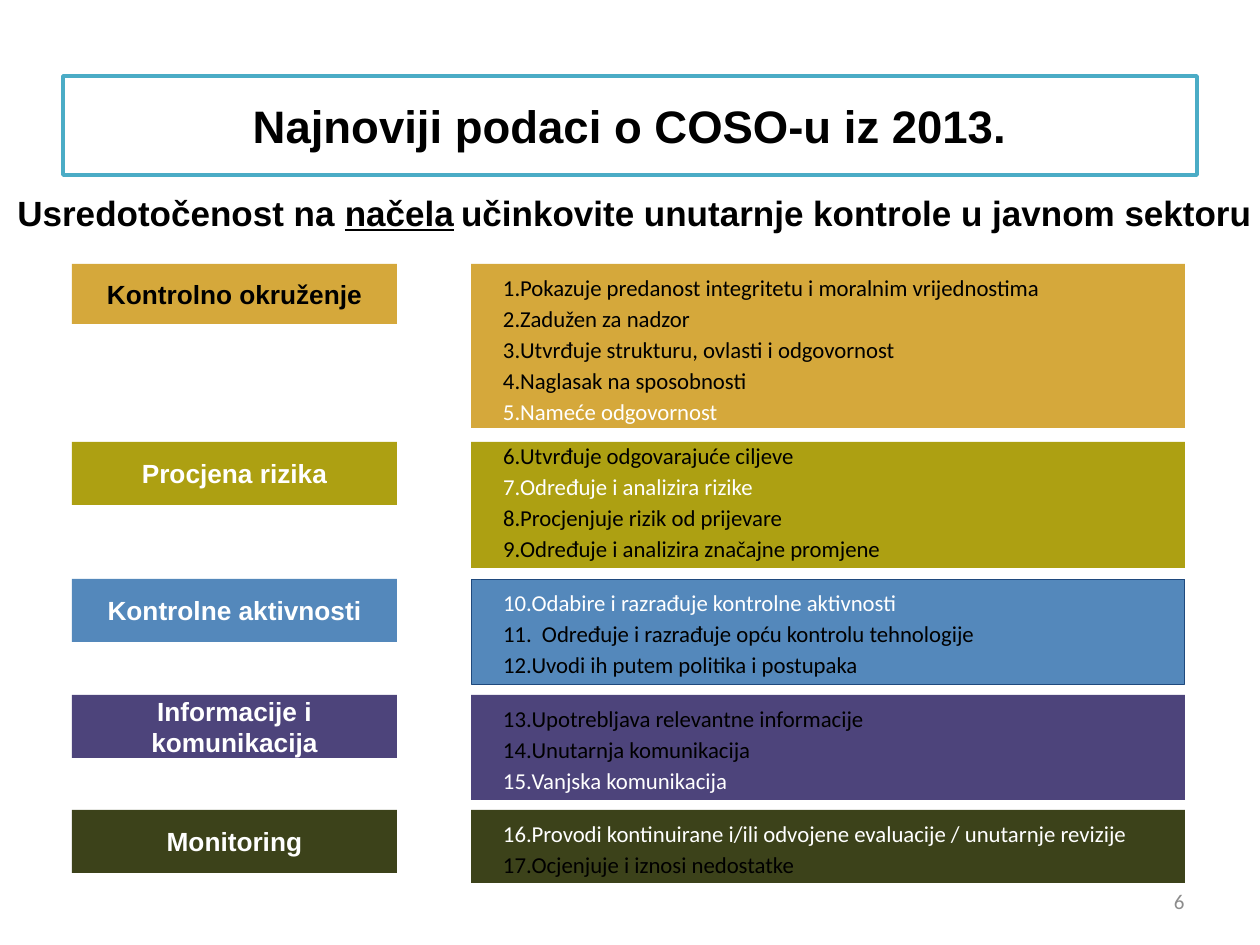
from lxml import etree
from pptx import Presentation
from pptx import util as u
from pptx.dml.color import RGBColor
from pptx.enum import shapes, text
from pptx.oxml.ns import qn

PX = 914400 / 126  # EMU per pixel
BLACK, WHITE = "000000", "FFFFFF"


def px(*lengths):
    return [u.Emu(round(length * PX)) for length in lengths]


def style(font, name, size, color, bold=False):
    font.name, font.size, font.bold = name, u.Pt(size), bold
    font.color.rgb = RGBColor.from_string(color)


deck = Presentation()
deck.slide_width, deck.slide_height = px(1260, 945)
page = deck.slides.add_slide(deck.slide_layouts[5])

# Title in a framed box
title = page.shapes.title
title.left, title.top, title.width, title.height = px(63, 76, 1134, 99)
title.fill.solid()
title.fill.fore_color.rgb = RGBColor.from_string(WHITE)
title.line.color.rgb = RGBColor.from_string("4BACC6")
title.line.width = u.Pt(2)
frame = title.text_frame
frame.text = "Najnoviji podaci o COSO-u iz 2013."
frame.auto_size = text.MSO_AUTO_SIZE.NONE
frame.vertical_anchor = text.MSO_ANCHOR.MIDDLE
para = frame.paragraphs[0]
para.alignment = text.PP_ALIGN.CENTER
style(para.font, "Arial", 26, BLACK, True)

# Rows: label, label colour, fill, top, label height, panel height,
# list (top offset, width, height), first number, items with colours
rows = [
    ("Kontrolno okruženje", BLACK, "D5A83B", 264, 60, 164, (10, 683, 168), 1, [
        ("Pokazuje predanost integritetu i moralnim vrijednostima", BLACK),
        ("Zadužen za nadzor", BLACK),
        ("Utvrđuje strukturu, ovlasti i odgovornost", BLACK),
        ("Naglasak na sposobnosti", BLACK),
        ("Nameće odgovornost", WHITE)]),
    ("Procjena rizika", WHITE, "ADA012", 442, 63, 126, (0, 698, 136), 6, [
        ("Utvrđuje odgovarajuće ciljeve", BLACK),
        ("Određuje i analizira rizike", WHITE),
        ("Procjenjuje rizik od prijevare", BLACK),
        ("Određuje i analizira značajne promjene", BLACK)]),
    ("Kontrolne aktivnosti", WHITE, "5488BB", 579, 63, 105, (10, 672, 57), 10, [
        ("Odabire i razrađuje kontrolne aktivnosti", WHITE),
        ("11.  Određuje i razrađuje opću kontrolu tehnologije", BLACK),
        ("Uvodi ih putem politika i postupaka", BLACK)]),
    ("Informacije i komunikacija", WHITE, "4D447B", 695, 63, 105, (10, 640, 89), 13, [
        ("Upotrebljava relevantne informacije", BLACK),
        ("Unutarnja komunikacija", BLACK),
        ("Vanjska komunikacija", WHITE)]),
    ("Monitoring", WHITE, "3C421A", 810, 63, 73, (10, 693, 38), 16, [
        ("Provodi kontinuirane i/ili odvojene evaluacije / unutarnje revizije", WHITE),
        ("Ocjenjuje i iznosi nedostatke", BLACK)]),
]

for name, name_color, fill, top, label_height, panel_height, area, first, items in rows:
    # Coloured panel and label
    panel, label = [
        page.shapes.add_shape(shapes.MSO_SHAPE.RECTANGLE, *px(left, top, width, height))
        for left, width, height in ((471, 714, panel_height), (72, 325, label_height))]
    for box in (panel, label):
        box.shadow.inherit = False
        box.fill.solid()
        box.fill.fore_color.rgb = RGBColor.from_string(fill)
        box.line.fill.background()
    if name == "Kontrolne aktivnosti":
        panel.line.color.rgb = RGBColor.from_string("1F497D")
        panel.line.width = u.Pt(0.5)

    frame = label.text_frame
    frame.text = name
    frame.word_wrap = True
    frame.vertical_anchor = text.MSO_ANCHOR.MIDDLE
    frame.margin_left = frame.margin_right = u.Inches(0.05)
    frame.margin_top = frame.margin_bottom = u.Inches(0.03)
    para = frame.paragraphs[0]
    para.alignment = text.PP_ALIGN.CENTER
    para.space_after = u.Pt(2)
    style(para.font, "Arial", 15, name_color, True)

    # Numbered principles
    offset, width, height = area
    frame = page.shapes.add_textbox(*px(503, top + offset, width, height)).text_frame
    frame.word_wrap = True
    frame.margin_left = frame.margin_right = frame.margin_top = frame.margin_bottom = 0
    start = first
    for index, (item, color) in enumerate(items):
        para = frame.paragraphs[0] if index == 0 else frame.add_paragraph()
        para.space_after = u.Pt(2)
        span = para.add_run()
        span.text = item
        style(span.font, "Calibri", 13, color)
        props = para._p.get_or_add_pPr()
        props.set("marL", "0")
        props.set("indent", str(-u.Inches(0.3)))
        if item.startswith("11."):  # typed number, so numbering restarts after it
            start = first + index + 1
        else:
            etree.SubElement(props, qn("a:buAutoNum"), type="arabicPeriod", startAt=str(start))

# Subtitle with one underlined word
frame = page.shapes.add_textbox(*px(5, 185, 1270, 55)).text_frame
frame.word_wrap = True
para = frame.paragraphs[0]
for words, name, size, bold in (
        ("Usredotočenost na ", "Arial", 20, True),
        ("načela", "Arial", 20, True),
        (" ", "Calibri", 18, False),
        ("učinkovite unutarnje kontrole u javnom sektoru", "Arial", 20, True)):
    span = para.add_run()
    span.text = words
    style(span.font, name, size, BLACK, bold)
    span.font.underline = words == "načela"

# Page number
frame = page.shapes.add_textbox(*px(903, 876, 294, 50)).text_frame
frame.text = "6"
frame.word_wrap = True
frame.vertical_anchor = text.MSO_ANCHOR.MIDDLE
para = frame.paragraphs[0]
para.alignment = text.PP_ALIGN.RIGHT
style(para.font, "Calibri", 12, "8C8C8C")

deck.save("out.pptx")
